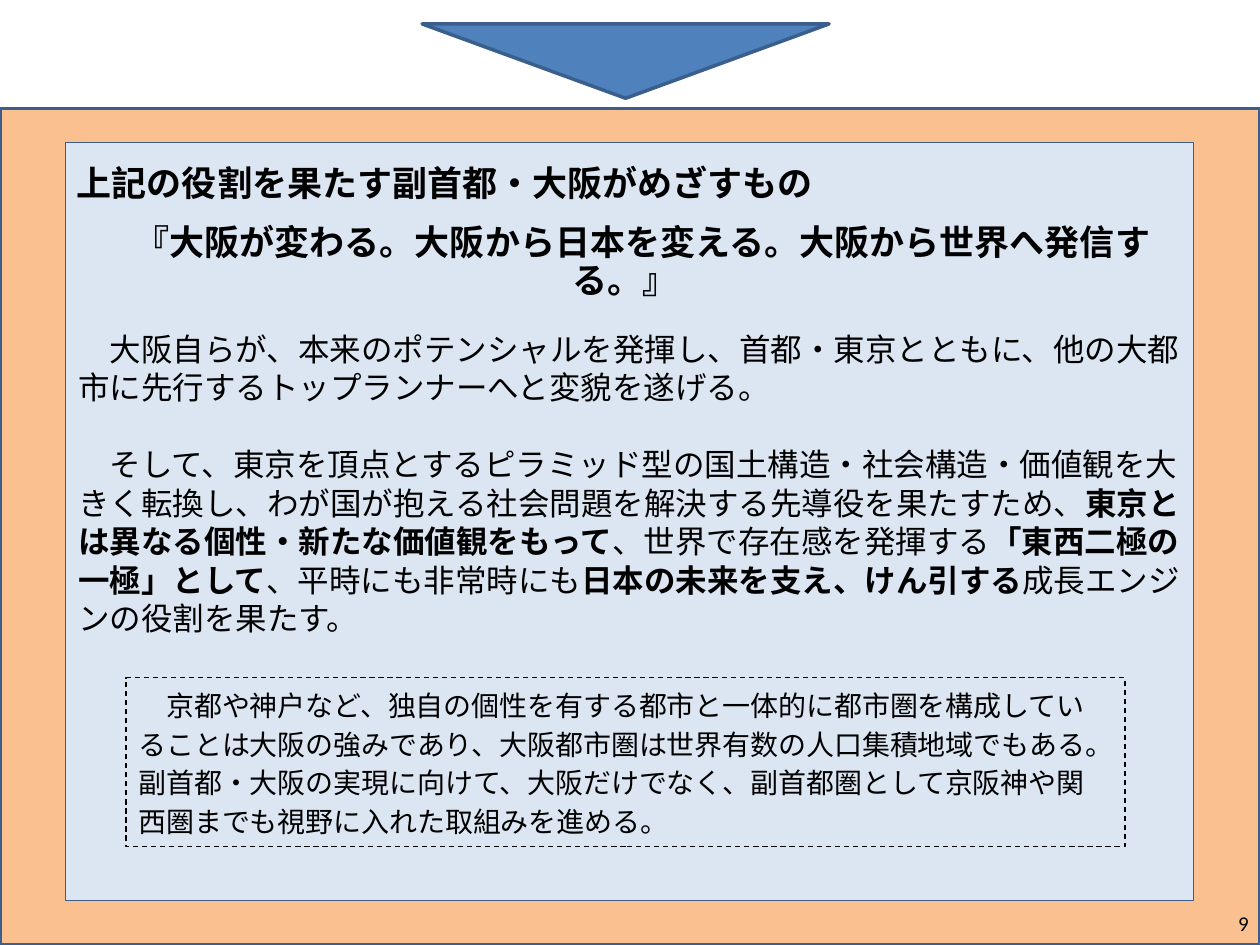
from lxml.etree import SubElement
from pptx import Presentation
from pptx.dml.color import RGBColor
from pptx.enum.dml import MSO_LINE
from pptx.enum.shapes import MSO_SHAPE
from pptx.enum.text import MSO_ANCHOR, MSO_AUTO_SIZE, PP_ALIGN
from pptx.oxml.ns import qn
from pptx.util import Inches, Pt

ORANGE = RGBColor(0xFA, 0xC0, 0x90)
PALE_BLUE = RGBColor(0xDC, 0xE6, 0xF2)
BLUE = RGBColor(0x4F, 0x81, 0xBD)
DARK_BLUE = RGBColor(0x3A, 0x5F, 0x8C)
BLACK = RGBColor(0, 0, 0)
JAPANESE_FONT = "Noto Sans CJK JP"
LINE_PITCH = Pt(22)

HEADING = "上記の役割を果たす副首都・大阪がめざすもの"
SLOGAN = "『大阪が変わる。大阪から日本を変える。大阪から世界へ発信する。』"
VISION = [
    [("　大阪自らが、本来のポテンシャルを発揮し、首都・東京とともに、他の大都市に先行する"
      "トップランナーへと変貌を遂げる。", False)],
    [("　そして、東京を頂点とするピラミッド型の国土構造・社会構造・価値観を大きく転換し、"
      "わが国が抱える社会問題を解決する先導役を果たすため、", False),
     ("東京とは異なる個性・新たな価値観をもって", True),
     ("、世界で存在感を発揮する", False),
     ("「東西二極の一極」として", True),
     ("、平時にも非常時にも", False),
     ("日本の未来を支え、けん引する", True),
     ("成長エンジンの役割を果たす。", False)],
]
REGION_NOTE = (
    "　京都や神戸など、独自の個性を有する都市と一体的に都市圏を構成していることは大阪の強みであり、"
    "大阪都市圏は世界有数の人口集積地域でもある。副首都・大阪の実現に向けて、大阪だけでなく、"
    "副首都圏として京阪神や関西圏までも視野に入れた取組みを進める。")


def place(shape, box):
    """Move a shape to a box of left, top, width and height in inches."""
    shape.left, shape.top, shape.width, shape.height = map(Inches, box)


def bring_to_front(shape):
    """Put a shape above everything drawn so far."""
    shape.element.getparent().append(shape.element)


def set_outline(shape, color, width, fill=None):
    """Give a shape its outline and, if any, its solid fill."""
    shape.line.color.rgb = color
    shape.line.width = Pt(width)
    if fill is None:
        shape.fill.background()
    else:
        shape.fill.solid()
        shape.fill.fore_color.rgb = fill


def prepare_frame(shape, anchor):
    """Return the wrapping text frame of a shape with a fixed size."""
    frame = shape.text_frame
    frame.word_wrap = True
    frame.auto_size = MSO_AUTO_SIZE.NONE
    frame.vertical_anchor = anchor
    return frame


def write_paragraph(paragraph, runs, size, align=PP_ALIGN.LEFT, gap=0):
    """Write (text, bold) runs in the Japanese font at the fixed line pitch."""
    paragraph.alignment = align
    paragraph.line_spacing = LINE_PITCH
    paragraph.space_before = Pt(gap)
    paragraph.space_after = Pt(0)
    for text, bold in runs:
        run = paragraph.add_run()
        run.text = text
        font = run.font
        font.size = Pt(size)
        font.bold = bold
        font.color.rgb = BLACK
        font.name = JAPANESE_FONT
        SubElement(run._r.get_or_add_rPr(), qn("a:ea"), typeface=JAPANESE_FONT)


def add_preset(slide, kind, box, fill, color, width):
    """Add a preset shape without a shadow."""
    shape = slide.shapes.add_shape(kind, *map(Inches, box))
    shape.shadow.inherit = False
    set_outline(shape, color, width, fill)
    return shape


def add_vision_panel(slide, box):
    """Fill the body placeholder with the vision text below the heading area."""
    panel = slide.placeholders[1]
    place(panel, box)
    bring_to_front(panel)
    set_outline(panel, DARK_BLUE, 0.5, PALE_BLUE)
    frame = prepare_frame(panel, MSO_ANCHOR.TOP)
    frame.margin_top = Inches(1.48)
    for index, runs in enumerate(VISION):
        paragraph = frame.add_paragraph() if index else frame.paragraphs[0]
        write_paragraph(paragraph, runs, 18, gap=22 if index else 0)
        properties = paragraph._p.get_or_add_pPr()
        properties.set("marL", "0")
        properties.set("indent", "0")
        SubElement(properties, qn("a:buNone"))


def add_heading(slide, box):
    """Put the heading in the title placeholder."""
    title = slide.shapes.title
    place(title, box)
    bring_to_front(title)
    frame = prepare_frame(title, MSO_ANCHOR.MIDDLE)
    write_paragraph(frame.paragraphs[0], [(HEADING, True)], 20)


def add_slogan(slide, box):
    """Add the centred slogan."""
    slogan = slide.shapes.add_textbox(*map(Inches, box))
    frame = prepare_frame(slogan, MSO_ANCHOR.MIDDLE)
    runs = [("　", False), (SLOGAN, True)]
    write_paragraph(frame.paragraphs[0], runs, 20, PP_ALIGN.CENTER)


def add_region_note(slide, box):
    """Add the dashed box about the wider region."""
    note = add_preset(slide, MSO_SHAPE.RECTANGLE, box, None, BLACK, 0.75)
    note.line.dash_style = MSO_LINE.DASH
    frame = prepare_frame(note, MSO_ANCHOR.TOP)
    write_paragraph(frame.paragraphs[0], [(REGION_NOTE, False)], 16)


def add_page_number(slide, box):
    """Add the page number in the corner."""
    number = slide.shapes.add_textbox(*map(Inches, box))
    frame = prepare_frame(number, MSO_ANCHOR.MIDDLE)
    paragraph = frame.paragraphs[0]
    paragraph.text = "9"
    paragraph.alignment = PP_ALIGN.RIGHT
    paragraph.font.size = Pt(12)
    paragraph.font.name = "Calibri"
    paragraph.font.color.rgb = BLACK


def main():
    """Build and save the slide."""
    presentation = Presentation()
    presentation.slide_width = Inches(10)
    presentation.slide_height = Inches(7.5)
    slide = presentation.slides.add_slide(presentation.slide_layouts[1])
    add_preset(slide, MSO_SHAPE.RECTANGLE, (0, 0.86, 10, 6.64), ORANGE, DARK_BLUE, 2)
    add_page_number(slide, (9.17, 7.13, 0.84, 0.4))
    add_vision_panel(slide, (0.52, 1.13, 8.95, 6.02))
    arrow = add_preset(slide, MSO_SHAPE.ISOSCELES_TRIANGLE, (3.35, 0.19, 3.23, 0.59),
                       BLUE, DARK_BLUE, 2)
    arrow.rotation = 180
    add_slogan(slide, (0.63, 1.77, 8.66, 0.62))
    add_heading(slide, (0.51, 1.15, 8.66, 0.62))
    add_region_note(slide, (1, 5.38, 7.93, 1.34))
    presentation.save("out.pptx")


if __name__ == "__main__":
    main()
